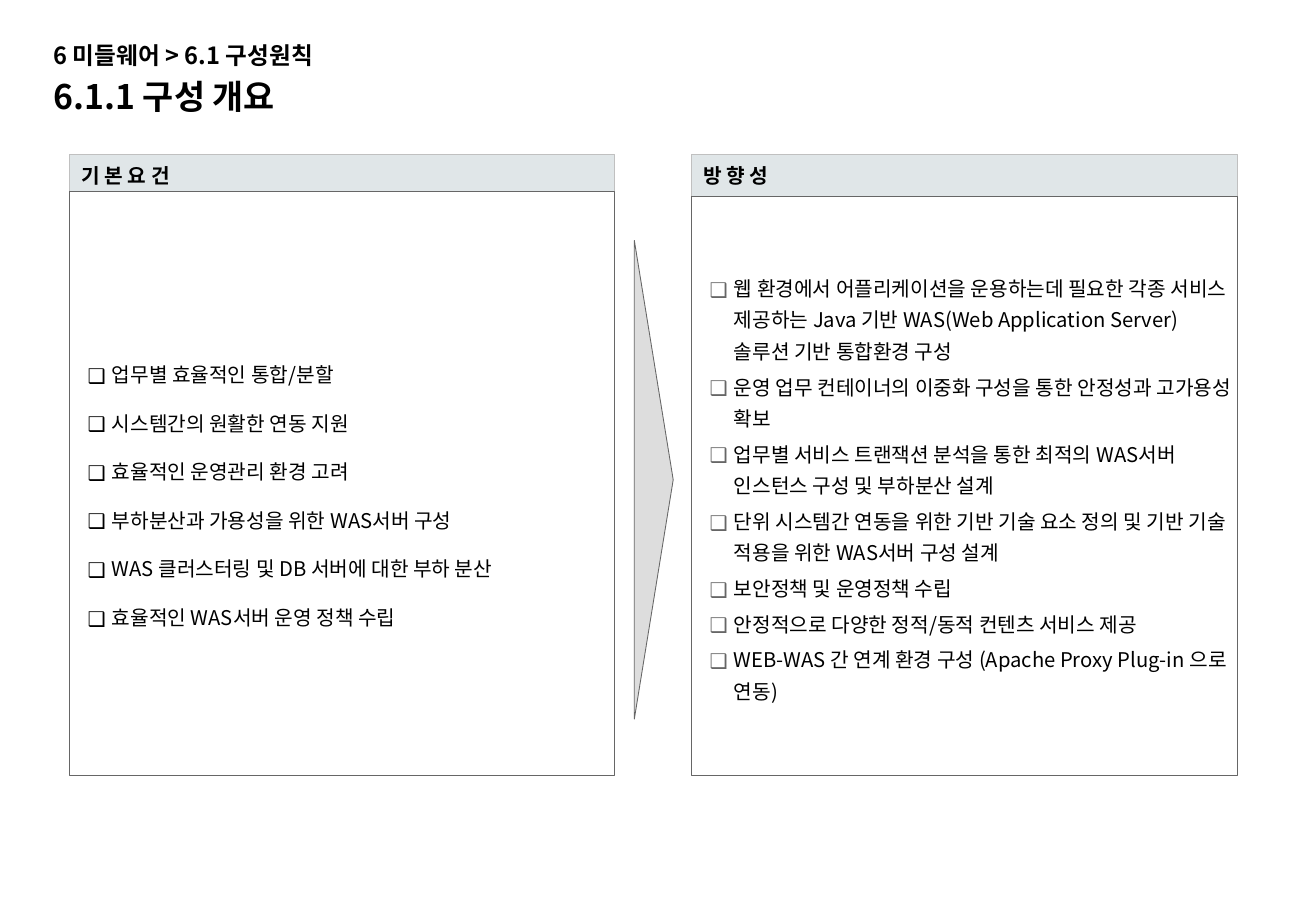
from lxml.etree import SubElement
from pptx import Presentation
from pptx.dml.color import RGBColor
from pptx.enum.shapes import MSO_SHAPE
from pptx.enum.text import MSO_ANCHOR, MSO_AUTO_SIZE, PP_ALIGN
from pptx.oxml.ns import qn
from pptx.util import Inches, Pt

COLORS = {
    "text": "000000", "head": "E0E6E8", "rim": "C0C0C0",
    "body": "FFFFFF", "edge": "666666", "arrow": "DDDDDD",
}
FONT = "Noto Sans CJK KR"

NEEDS = [
    "업무별 효율적인 통합/분할",
    "시스템간의 원활한 연동 지원",
    "효율적인 운영관리 환경 고려",
    "부하분산과 가용성을 위한 WAS서버 구성",
    "WAS 클러스터링 및 DB 서버에 대한 부하 분산",
    "효율적인 WAS서버 운영 정책 수립",
]
GOALS = [
    "웹 환경에서 어플리케이션을 운용하는데 필요한 각종 서비스 제공하는 Java 기반 "
    "WAS(Web Application Server) 솔루션 기반 통합환경 구성",
    "운영 업무 컨테이너의 이중화 구성을 통한 안정성과 고가용성 확보",
    "업무별 서비스 트랜잭션 분석을 통한 최적의 WAS서버 인스턴스 구성 및 부하분산 설계",
    "단위 시스템간 연동을 위한 기반 기술 요소 정의 및 기반 기술 적용을 위한 WAS서버 구성 설계",
    "보안정책 및 운영정책 수립",
    "안정적으로 다양한 정적/동적 컨텐츠 서비스 제공",
    "WEB-WAS 간 연계 환경 구성 (Apache Proxy Plug-in 으로 연동)",
]


def rgb(name):
    return RGBColor.from_string(COLORS[name])


def write(para, text, size=12, bold=False, lines=1.0, before=0,
          left=0, hang=0, bullet=None):
    """Fill one paragraph; bullet is the name of the marker colour."""
    para.alignment = PP_ALIGN.LEFT
    para.line_spacing = lines
    para.space_before = Pt(before)
    props = para._p.get_or_add_pPr()
    props.set("marL", str(Inches(left)))
    props.set("indent", str(-Inches(hang)))
    if bullet:
        tint = SubElement(props, qn("a:buClr"))
        SubElement(tint, qn("a:srgbClr"), val=COLORS[bullet])
        SubElement(props, qn("a:buFont"), typeface=FONT)
        SubElement(props, qn("a:buChar"), char="❑")
    else:
        SubElement(props, qn("a:buNone"))
    run = para.add_run()
    run.text = text
    font = run.font
    font.name, font.size, font.bold = FONT, Pt(size), bold
    font.color.rgb = rgb("text")
    SubElement(run._r.get_or_add_rPr(), qn("a:ea"), typeface=FONT)


class Board:
    def __init__(self, deck):
        self.slide = deck.slides.add_slide(deck.slide_layouts.get_by_name("Comparison"))
        self.holders = {h.placeholder_format.idx: h for h in self.slide.placeholders}

    def paint(self, shape, fill, line):
        shape.fill.solid()
        shape.fill.fore_color.rgb = rgb(fill)
        shape.line.color.rgb = rgb(line)
        shape.line.width = Pt(0.5)

    def place(self, idx, box, anchor, inset=(0.1, 0.05)):
        shape = self.holders[idx]
        shape.left, shape.top, shape.width, shape.height = map(Inches, box)
        frame = shape.text_frame
        frame.word_wrap = True
        frame.auto_size = MSO_AUTO_SIZE.NONE
        frame.vertical_anchor = anchor
        frame.margin_left = frame.margin_right = Inches(inset[0])
        frame.margin_top = frame.margin_bottom = Inches(inset[1])
        return shape

    def title(self, trail, name):
        frame = self.place(0, (0.34, 0.28, 6.44, 0.73), MSO_ANCHOR.BOTTOM).text_frame
        style = dict(bold=True, left=0.38, hang=0.38)
        write(frame.paragraphs[0], trail, size=14, **style)
        write(frame.add_paragraph(), name, size=20, before=4, **style)

    def head(self, idx, text, left):
        shape = self.place(idx, (left, 1.27, 4.49, 0.35), MSO_ANCHOR.MIDDLE)
        self.paint(shape, "head", "rim")
        write(shape.text_frame.paragraphs[0], text, bold=True)

    def items(self, idx, texts, left, top, before=0, **style):
        box = (left, top, 4.49, 6.385 - top)
        shape = self.place(idx, box, MSO_ANCHOR.MIDDLE, (0.04, 0.04))
        self.paint(shape, "body", "edge")
        frame = shape.text_frame
        for i, text in enumerate(texts):
            para = frame.add_paragraph() if i else frame.paragraphs[0]
            write(para, text, before=before if i else 0, left=0.31, hang=0.2, **style)

    def arrow(self, *box):
        shape = self.slide.shapes.add_shape(
            MSO_SHAPE.ISOSCELES_TRIANGLE, *map(Inches, box))
        shape.rotation = 90
        shape.shadow.inherit = False
        self.paint(shape, "arrow", "edge")


def main():
    deck = Presentation()
    deck.slide_width, deck.slide_height = Inches(10.83), Inches(7.5)
    board = Board(deck)
    near, far = 0.57, 5.69

    # Title
    board.title("6 미들웨어 > 6.1 구성원칙", "6.1.1 구성 개요")

    # Left panel: requirements
    board.head(1, "기 본 요 건", near)
    board.items(2, NEEDS, near, 1.58, lines=2.0, bullet="text")

    # Right panel: direction
    board.head(3, "방 향 성", far)
    board.items(4, GOALS, far, 1.62, before=2.4, lines=1.3, bullet="edge")

    # Arrow between the panels
    board.arrow(3.41, 3.79, 3.94, 0.32)
    deck.save("out.pptx")


if __name__ == "__main__":
    main()
